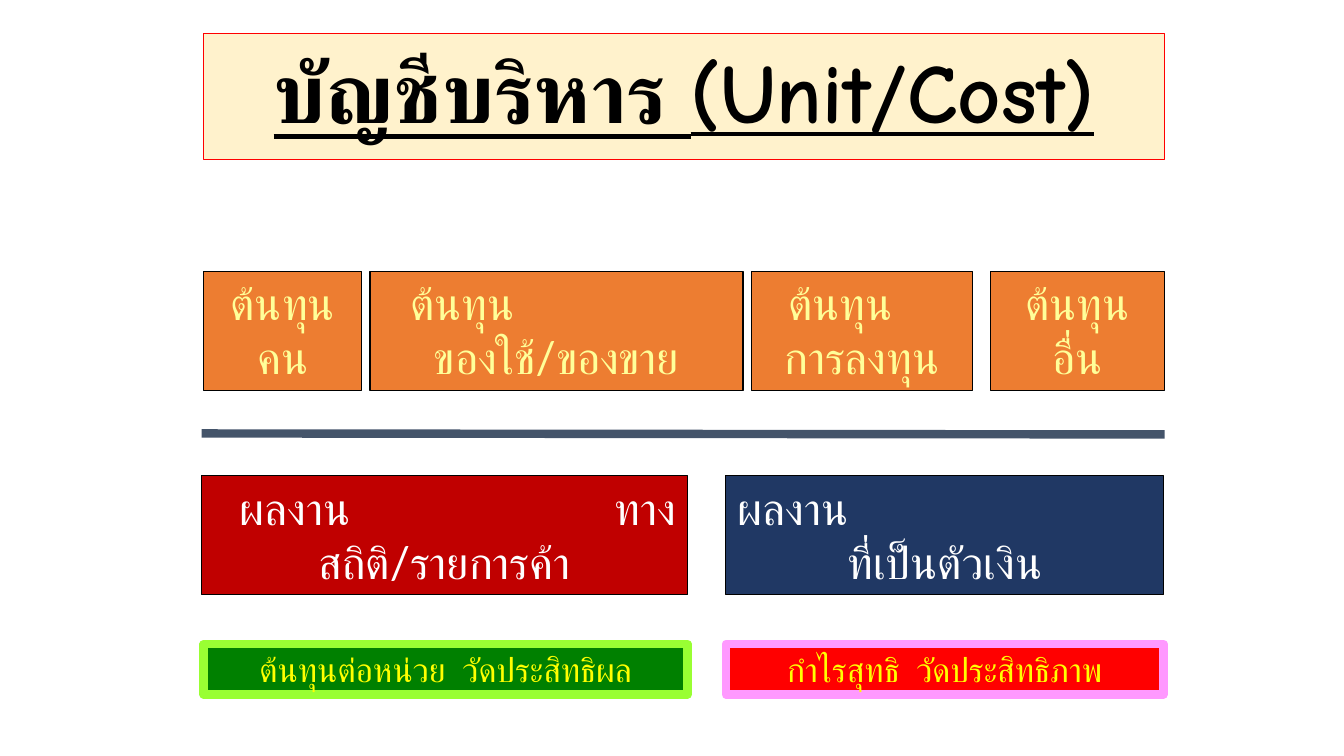
from lxml import etree
from pptx import Presentation
from pptx.dml.color import RGBColor
from pptx.enum.shapes import MSO_CONNECTOR, MSO_SHAPE
from pptx.enum.text import MSO_ANCHOR, MSO_AUTO_SIZE, PP_ALIGN
from pptx.oxml.ns import qn
from pptx.util import Inches, Pt

TITLE = "บัญชีบริหาร (Unit/Cost)"
LEFT, RIGHT = 2.02, 11.55
COST_TOP, RESULT_TOP, MEASURE_TOP = 2.69, 4.72, 6.39
TALL, SHORT = 1.18, 0.5

# Each line: text and left indent in inches; None centres the line.
# left, width, lines
COSTS = [
    (2.02, 1.57, [("ต้นทุน", None), ("คน", None)]),
    (3.67, 3.70, [("ต้นทุน", 0.3), ("ของใช้/ของขาย", None)]),
    (7.45, 2.20, [("ต้นทุน", 0.27), ("การลงทุน", None)]),
    (9.82, 1.73, [("ต้นทุน", None), ("อื่น", None)]),
]
# left, width, fill, lines
RESULTS = [
    (2.00, 4.82, "C00000", [("ผลงาน\tทาง", 0.28), ("สถิติ/รายการค้า", None)]),
    (7.20, 4.34, "203864", [("ผลงาน", 0.02), ("ที่เป็นตัวเงิน", None)]),
]
RESULT_TAB = 3.72
# left, width, fill, border, text
MEASURES = [
    (2.02, 4.80, "008000", "99FF33", "ต้นทุนต่อหน่วย  วัดประสิทธิผล"),
    (7.20, 4.34, "FF0000", "FF99FF", "กำไรสุทธิ  วัดประสิทธิภาพ"),
]


def color(value):
    return RGBColor.from_string(value)


def paint(shape, fill, border, border_width):
    shape.fill.solid()
    shape.fill.fore_color.rgb = color(fill)
    shape.line.color.rgb = color(border)
    shape.line.width = Pt(border_width)


def style_font(paragraph, name, size, text_color):
    paragraph.font.name = name
    paragraph.font.size = Pt(size)
    paragraph.font.color.rgb = color(text_color)


def indent_line(paragraph, indent):
    """Left-align a line at an indent, with a tab stop for a second part."""
    paragraph.alignment = PP_ALIGN.LEFT
    properties = paragraph._p.get_or_add_pPr()
    properties.set("marL", str(Inches(indent)))
    if "\t" in paragraph.text:
        tabs = etree.Element(qn("a:tabLst"))
        etree.SubElement(tabs, qn("a:tab"), pos=str(Inches(RESULT_TAB)), algn="l")
        properties.find(qn("a:defRPr")).addprevious(tabs)


def add_box(slide, bounds, lines, fill, border, border_width, size, text_color):
    box = slide.shapes.add_shape(MSO_SHAPE.RECTANGLE, *map(Inches, bounds))
    box.shadow.inherit = False
    paint(box, fill, border, border_width)
    frame = box.text_frame
    frame.word_wrap = True
    frame.vertical_anchor = MSO_ANCHOR.TOP
    for index, (text, indent) in enumerate(lines):
        paragraph = frame.add_paragraph() if index else frame.paragraphs[0]
        paragraph.text = text
        paragraph.alignment = PP_ALIGN.CENTER
        style_font(paragraph, "Lato", size, text_color)
        if indent is not None:
            indent_line(paragraph, indent)


def add_title(slide):
    title = slide.shapes.title
    title.left, title.top = Inches(LEFT), Inches(0.33)
    title.width, title.height = Inches(RIGHT - LEFT), Inches(1.25)
    paint(title, "FFF2CC", "FF0000", 0.75)
    frame = title.text_frame
    frame.text = TITLE
    frame.auto_size = MSO_AUTO_SIZE.NONE
    frame.vertical_anchor = MSO_ANCHOR.MIDDLE
    paragraph = frame.paragraphs[0]
    paragraph.alignment = PP_ALIGN.CENTER
    paragraph.line_spacing = 0.9
    style_font(paragraph, "Comic Neue", 60, "000000")
    paragraph.font.bold = True
    paragraph.font.underline = True


def add_divider(slide):
    divider = slide.shapes.add_connector(
        MSO_CONNECTOR.STRAIGHT, Inches(2), Inches(4.3), Inches(RIGHT), Inches(4.31))
    divider.line.color.rgb = color("44546A")
    divider.line.width = Pt(6)
    etree.SubElement(divider._element.spPr, qn("a:effectLst"))


def main():
    presentation = Presentation()
    presentation.slide_width = Inches(13.33)
    presentation.slide_height = Inches(7.5)
    slide = presentation.slides.add_slide(presentation.slide_layouts[5])
    add_title(slide)
    add_divider(slide)
    for left, width, lines in COSTS:
        add_box(slide, (left, COST_TOP, width, TALL), lines,
                "ED7D31", "000000", 0.75, 32, "FFFF99")
    for left, width, fill, lines in RESULTS:
        add_box(slide, (left, RESULT_TOP, width, TALL), lines,
                fill, "000000", 0.75, 32, "FFFFFF")
    for left, width, fill, border, text in MEASURES:
        add_box(slide, (left, MEASURE_TOP, width, SHORT), [(text, None)],
                fill, border, 6, 24, "FFFF00")
    presentation.save("out.pptx")


if __name__ == "__main__":
    main()
